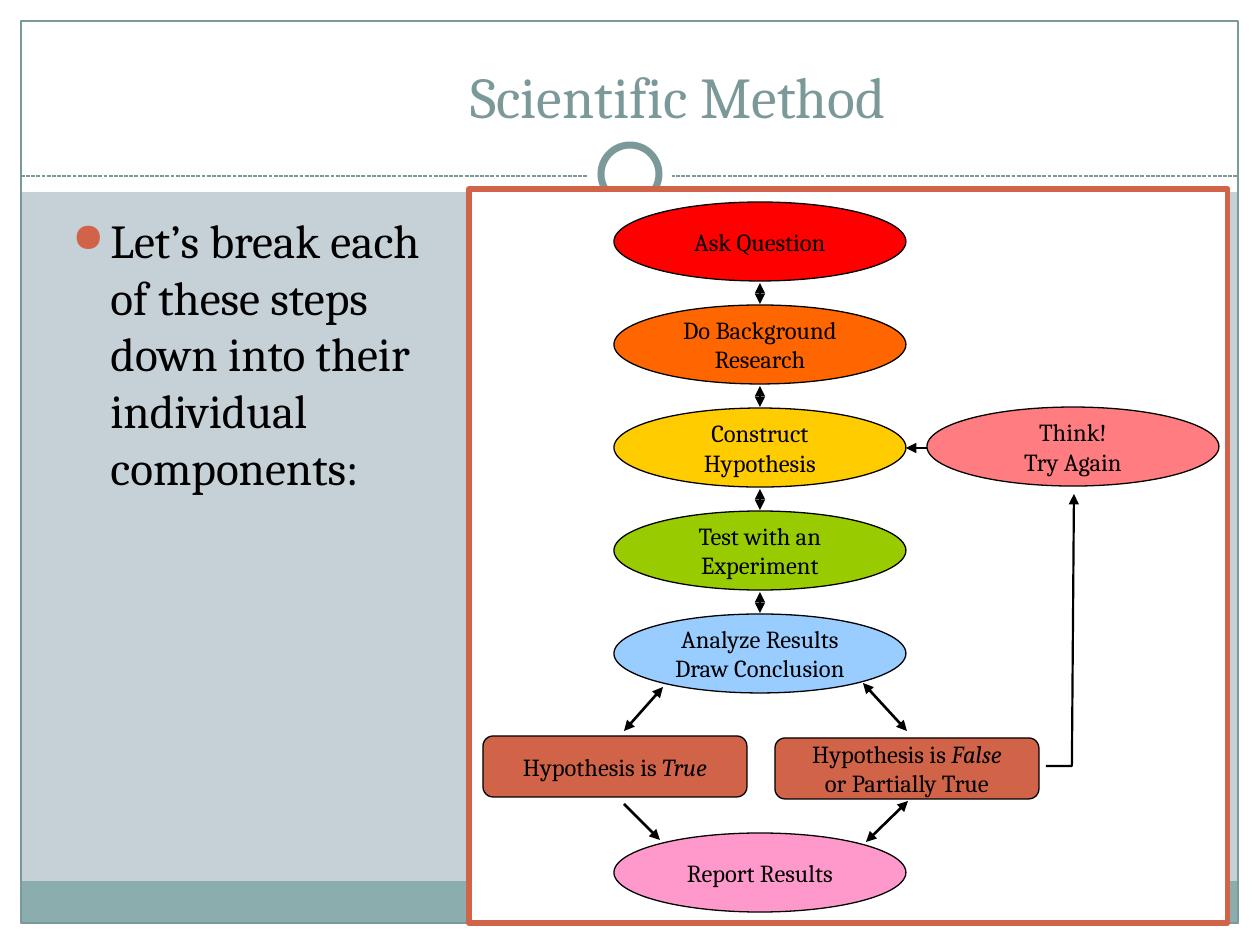
"""Build the Scientific Method slide with its flow chart."""
from lxml.etree import SubElement
from pptx import Presentation
from pptx.dml.color import RGBColor
from pptx.enum.dml import MSO_LINE
from pptx.enum.shapes import MSO_CONNECTOR, MSO_SHAPE
from pptx.enum.text import MSO_ANCHOR, PP_ALIGN
from pptx.oxml.ns import qn
from pptx.util import Pt

SCALE = 914400 / 126
FONT = "Cambria"
WHITE = RGBColor(255, 255, 255)
BLACK = RGBColor(0, 0, 0)
SLATE = RGBColor(0x7C, 0x99, 0x9A)
TEAL = RGBColor(0x8C, 0xAD, 0xAE)
MIST = RGBColor(0xC5, 0xD1, 0xD7)
RUST = RGBColor(0xD1, 0x63, 0x49)
RED = RGBColor(0xFF, 0, 0)
ORANGE = RGBColor(0xFF, 0x66, 0)
YELLOW = RGBColor(0xFF, 0xCC, 0)
GREEN = RGBColor(0x99, 0xCC, 0)
BLUE = RGBColor(0x99, 0xCC, 0xFF)
CORAL = RGBColor(0xFF, 0x7C, 0x80)
PINK = RGBColor(0xFF, 0x99, 0xCC)

presentation = Presentation()
presentation.slide_width = round(1260 * SCALE)
presentation.slide_height = round(945 * SCALE)
slide = presentation.slides.add_slide(presentation.slide_layouts[6])
slide.background.fill.solid()
slide.background.fill.fore_color.rgb = MIST


def add_block(kind, box, fill=None, line=None, width=0.75):
    shape = slide.shapes.add_shape(kind, *[round(value * SCALE) for value in box])
    shape.shadow.inherit = False
    if fill is None:
        shape.fill.background()
    else:
        shape.fill.solid()
        shape.fill.fore_color.rgb = fill
    if line is None:
        shape.line.fill.background()
    else:
        shape.line.color.rgb = line
        shape.line.width = Pt(width)
    return shape


def add_line(start, end, color, width, ends=()):
    points = [round(value * SCALE) for value in start + end]
    line = slide.shapes.add_connector(MSO_CONNECTOR.STRAIGHT, *points)
    line.line.color.rgb = color
    line.line.width = Pt(width)
    properties = line._element.spPr
    for end_name in ends:
        SubElement(properties.find(qn("a:ln")), qn(f"a:{end_name}"), type="triangle")
    SubElement(properties, qn("a:effectLst"))
    return line


for box, fill in [
    ((0, 924, 1260, 21), WHITE),
    ((0, 0, 1260, 192), WHITE),
    ((0, 0, 21, 945), WHITE),
    ((1239, 0, 21, 945), WHITE),
    ((21, 881, 1217, 43), TEAL),
]:
    add_block(MSO_SHAPE.RECTANGLE, box, fill)
add_block(MSO_SHAPE.RECTANGLE, (21, 21, 1217, 902), line=SLATE)
divider = add_line((21, 176), (1239, 176), SLATE, 0.75)
divider.line.dash_style = MSO_LINE.SQUARE_DOT
add_block(MSO_SHAPE.OVAL, (588, 132, 84, 84), WHITE)
add_block(MSO_SHAPE.OVAL, (601, 145, 58, 58), WHITE, SLATE, 4)
add_block(MSO_SHAPE.RECTANGLE, (469, 189, 759, 734), WHITE, RUST, 3)

for box, text, size, color, anchor in [
    ((108, 31, 1140, 105), "Scientific Method", 33, SLATE, MSO_ANCHOR.BOTTOM),
    ((60, 205, 408, 634), "Let’s break each of these steps down into their individual components:",
     27, BLACK, MSO_ANCHOR.TOP),
]:
    text_box = slide.shapes.add_textbox(*[round(value * SCALE) for value in box])
    text_box.text_frame.word_wrap = True
    text_box.text_frame.vertical_anchor = anchor
    paragraph = text_box.text_frame.paragraphs[0]
    paragraph.text = text
    paragraph.font.name = FONT
    paragraph.font.size = Pt(size)
    paragraph.font.color.rgb = color
    if anchor == MSO_ANCHOR.BOTTOM:
        paragraph.alignment = PP_ALIGN.CENTER
    else:
        paragraph.space_before = Pt(5)
        properties = paragraph._p.get_or_add_pPr()
        indent = round(38 * SCALE)
        properties.set("marL", str(indent))
        properties.set("indent", str(-indent))
        bullet_color = SubElement(properties, qn("a:buClr"))
        SubElement(bullet_color, qn("a:srgbClr"), val=str(RUST))
        SubElement(properties, qn("a:buSzPct"), val="85000")
        SubElement(properties, qn("a:buChar"), char="●")
        properties.append(properties.find(qn("a:defRPr")))

OVAL_SIZE = (292, 79)
BOX_SIZE = (264, 61)
STEP_LEFT, STEP_TOP, STEP_PITCH = 614, 202, 103
steps = [
    (["Ask Question"], RED),
    (["Do Background", "Research"], ORANGE),
    (["Construct", "Hypothesis"], YELLOW),
    (["Test with an", "Experiment"], GREEN),
    (["Analyze Results", "Draw Conclusion"], BLUE),
]
nodes = [
    (MSO_SHAPE.OVAL, (STEP_LEFT, STEP_TOP + STEP_PITCH * index) + OVAL_SIZE, lines, fill)
    for index, (lines, fill) in enumerate(steps)
] + [
    (MSO_SHAPE.OVAL, (927, 407) + OVAL_SIZE, ["Think!", "Try Again"], CORAL),
    (MSO_SHAPE.OVAL, (STEP_LEFT, 833) + OVAL_SIZE, ["Report Results"], PINK),
    (MSO_SHAPE.ROUNDED_RECTANGLE, (483, 736) + BOX_SIZE, ["Hypothesis is |True"], RUST),
    (MSO_SHAPE.ROUNDED_RECTANGLE, (775, 738) + BOX_SIZE,
     ["Hypothesis is |False", "or Partially True"], RUST),
]
for kind, box, lines, fill in nodes:
    frame = add_block(kind, box, fill, BLACK).text_frame
    frame.word_wrap = False
    frame.vertical_anchor = MSO_ANCHOR.MIDDLE
    for index, line in enumerate(lines):
        paragraph = frame.add_paragraph() if index else frame.paragraphs[0]
        paragraph.alignment = PP_ALIGN.CENTER
        paragraph.font.name = FONT
        paragraph.font.size = Pt(14)
        paragraph.font.color.rgb = BLACK
        for position, part in enumerate(line.split("|")):
            run = paragraph.add_run()
            run.text = part
            if position:
                run.font.italic = True

BOTH = ("headEnd", "tailEnd")
for index in range(len(steps) - 1):
    top = STEP_TOP + OVAL_SIZE[1] + 2 + STEP_PITCH * index
    add_line((760, top), (760, top + 21), BLACK, 1.5, BOTH)
for start, end, ends in [
    ((863, 683), (907, 731), BOTH),
    ((908, 801), (866, 842), BOTH),
    ((663, 687), (624, 731), BOTH),
    ((624, 804), (660, 840), ("tailEnd",)),
    ((906, 448), (927, 448), ("headEnd",)),
]:
    add_line(start, end, BLACK, 1.5, ends)

builder = slide.shapes.build_freeform(1046, 766, scale=SCALE)
builder.add_line_segments([(1072, 766), (1074, 494)], close=False)
retry_arrow = builder.convert_to_shape()
retry_arrow.shadow.inherit = False
retry_arrow.fill.background()
retry_arrow.line.color.rgb = BLACK
retry_arrow.line.width = Pt(1.25)
SubElement(retry_arrow._element.spPr.find(qn("a:ln")), qn("a:tailEnd"), type="triangle")

presentation.save("out.pptx")
